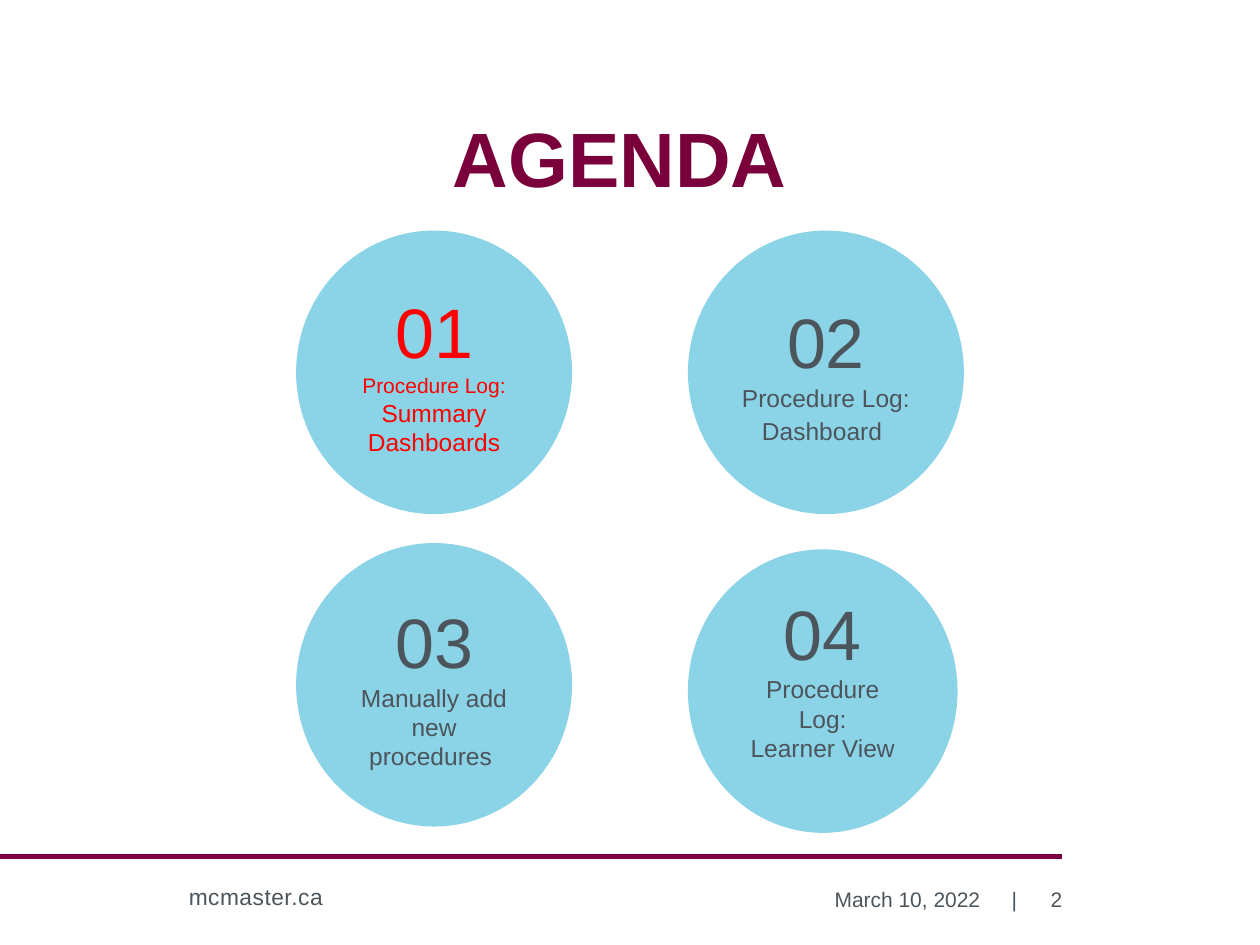
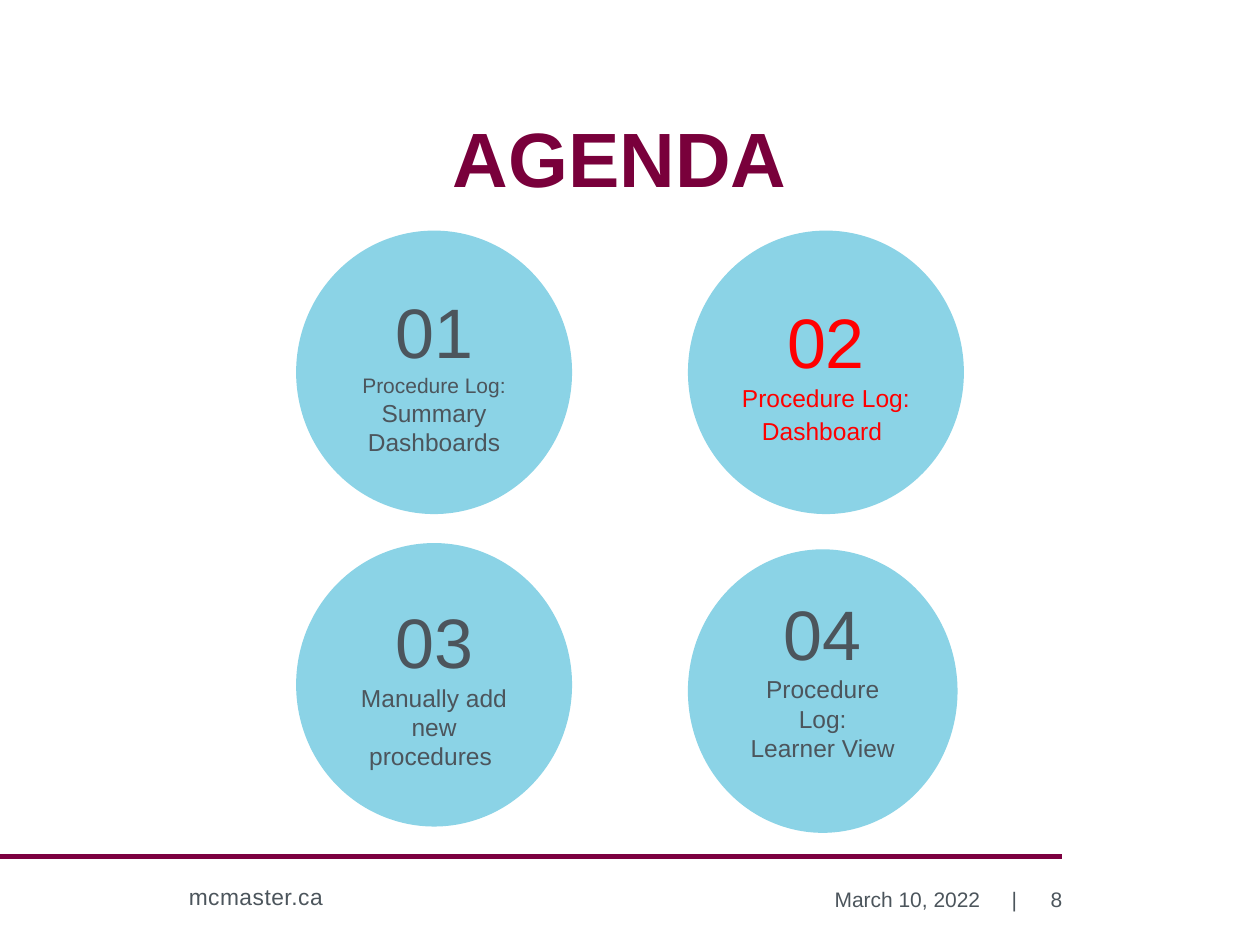
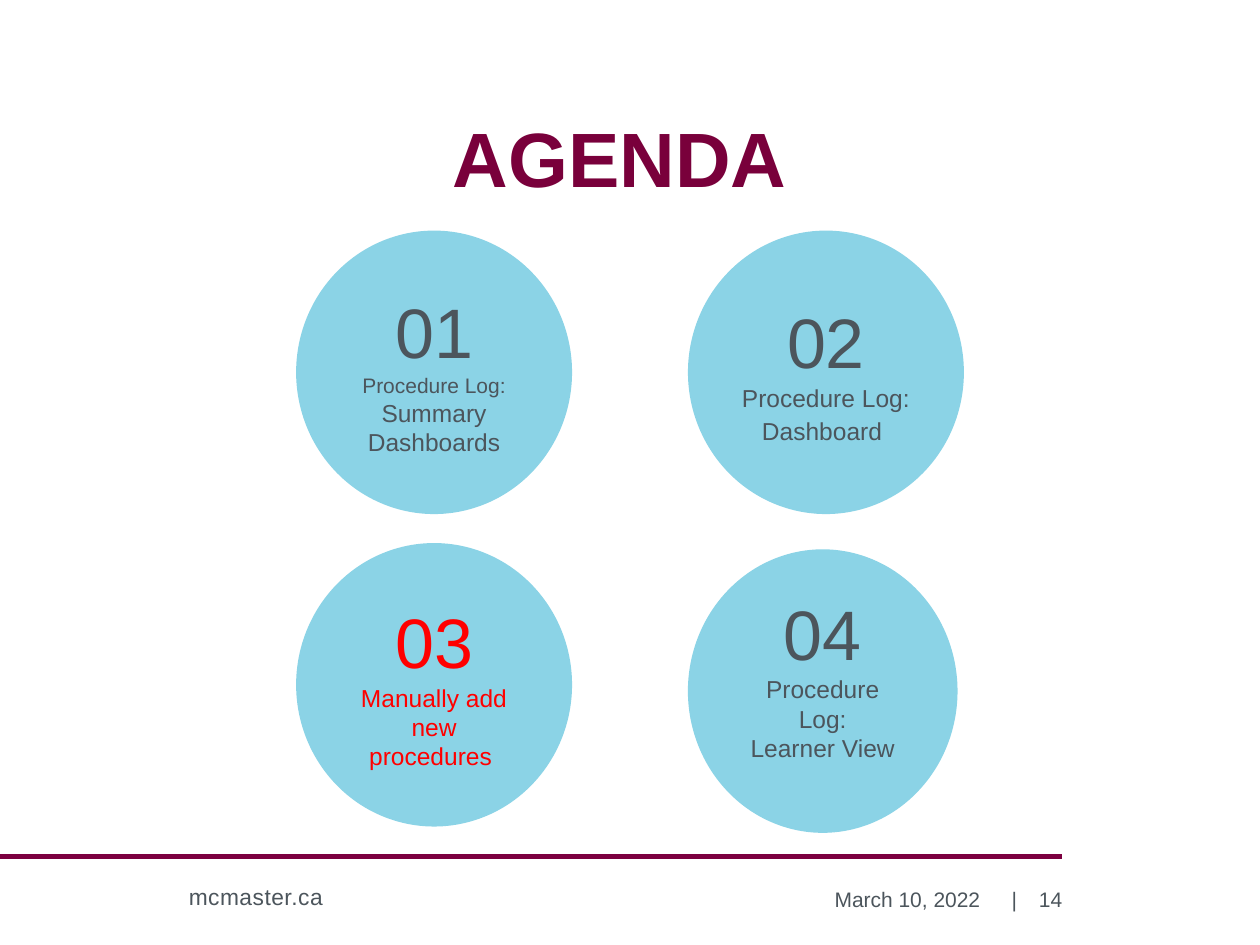
from pptx import Presentation
from pptx.dml.color import RGBColor
from pptx.enum.shapes import MSO_CONNECTOR, MSO_SHAPE
from pptx.enum.text import MSO_ANCHOR, PP_ALIGN
from pptx.oxml.ns import qn
from pptx.util import Inches, Pt

LEFT, CENTER, RIGHT = PP_ALIGN.LEFT, PP_ALIGN.CENTER, PP_ALIGN.RIGHT
TOP, MIDDLE, BOTTOM = MSO_ANCHOR.TOP, MSO_ANCHOR.MIDDLE, MSO_ANCHOR.BOTTOM
STRAIGHT, ELLIPSE = MSO_CONNECTOR.STRAIGHT, MSO_SHAPE.OVAL

FONT = "Arial"
TITLE_MAROON, RULE_MAROON = "79003B", "7C0040"
GREY, RED, SKY = "4C555C", "FF0000", "8BD3E6"
INSETS = (0.1, 0.05, 0.1, 0.05)
FOOTER_TOP, FOOTER_HEIGHT = 6.94, 0.4

# Each topic: number, position, paragraphs of (text, size) spans, bottom inset
TOPICS = [
    ("01", (2.35, 1.83, 2.19, 2.25),
     [[("Procedure Log: ", 12), ("Summary Dashboards", 14)]], 0.05),
    ("02", (5.46, 1.83, 2.19, 2.25),
     [[("Procedure Log: Dashboard", 14), (" ", 16)]], 0.05),
    ("03", (2.35, 4.31, 2.19, 2.25),
     [[("Manually add new procedures ", 14)]], 0.05),
    ("04", (5.46, 4.36, 2.14, 2.25),
     [[("Procedure Log:", 14)], [("Learner View", 14)]], 0.28),
]
PAGES = [("2", "01"), ("8", "02"), ("14", "03")]


def color(value):
    return RGBColor.from_string(value)


def inches(values):
    return [Inches(value) for value in values]


def write(box, paragraphs, tint=GREY, align=LEFT, anchor=TOP, insets=INSETS,
          bold=False, line_spacing=None, tracking=None):
    """Fill a box with paragraphs, each a list of (text, size) spans."""
    frame = box.text_frame
    frame.word_wrap = True
    frame.vertical_anchor = anchor
    (frame.margin_left, frame.margin_top,
     frame.margin_right, frame.margin_bottom) = inches(insets)
    for index, spans in enumerate(paragraphs):
        para = frame.add_paragraph() if index else frame.paragraphs[0]
        para.alignment = align
        para.line_spacing = line_spacing
        for text, size in spans:
            span = para.add_run()
            span.text = text
            span.font.name = FONT
            span.font.size = Pt(size)
            span.font.bold = bold
            span.font.color.rgb = color(tint)
            if tracking:
                span.font._element.set("spc", str(tracking))


class AgendaDeck:
    def __init__(self):
        self.deck = Presentation()
        self.deck.slide_width, self.deck.slide_height = inches((10, 7.5))
        self.page = None

    def add_page(self, number):
        self.page = self.deck.slides.add_slide(self.deck.slide_layouts[6])
        self.rule((0, 6.8), (8.43, 6.8))
        self.text("mcmaster.ca", (1.4, 6.96, 2.74, 0.32), size=13, tracking=30)
        self.footer_text("|", 7.92, 0.25)
        self.footer_text(number, 7.91, 0.52, insets=(0.1, 0.05, 0, 0.05))
        self.footer_text("March 10, 2022", 5.74, 2.14)
        self.text("AGENDA", (0.12, 0.89, 9.6, 0.72), size=44,
                  tint=TITLE_MAROON, bold=True, align=CENTER, anchor=BOTTOM,
                  insets=(0.1, 0.05, 0.1, 0), line_spacing=1.5)

    def rule(self, start, end):
        line = self.page.shapes.add_connector(
            STRAIGHT, *inches(start), *inches(end))
        line.line.color.rgb = color(RULE_MAROON)
        line.line.width = Pt(3)
        properties = line._element.spPr
        properties.append(properties.makeelement(qn("a:effectLst"), {}))

    def text(self, text, place, size=12, **style):
        box = self.page.shapes.add_textbox(*inches(place))
        write(box, [[(text, size)]], **style)

    def footer_text(self, text, left, width, **style):
        self.text(text, (left, FOOTER_TOP, width, FOOTER_HEIGHT),
                  align=RIGHT, anchor=MIDDLE, **style)

    def topic(self, number, place, paragraphs, bottom_inset, tint):
        circle = self.page.shapes.add_shape(ELLIPSE, *inches(place))
        circle.shadow.inherit = False
        circle.fill.solid()
        circle.fill.fore_color.rgb = color(SKY)
        circle.line.fill.background()
        write(circle, [[(number, 40)], *paragraphs], tint=tint, align=CENTER,
              anchor=MIDDLE, insets=(*INSETS[:3], bottom_inset))


def main():
    agenda = AgendaDeck()
    for page_number, current in PAGES:
        agenda.add_page(page_number)
        for number, place, paragraphs, bottom_inset in TOPICS:
            agenda.topic(number, place, paragraphs, bottom_inset,
                         tint=RED if number == current else GREY)
    agenda.deck.save("out.pptx")


if __name__ == "__main__":
    main()
